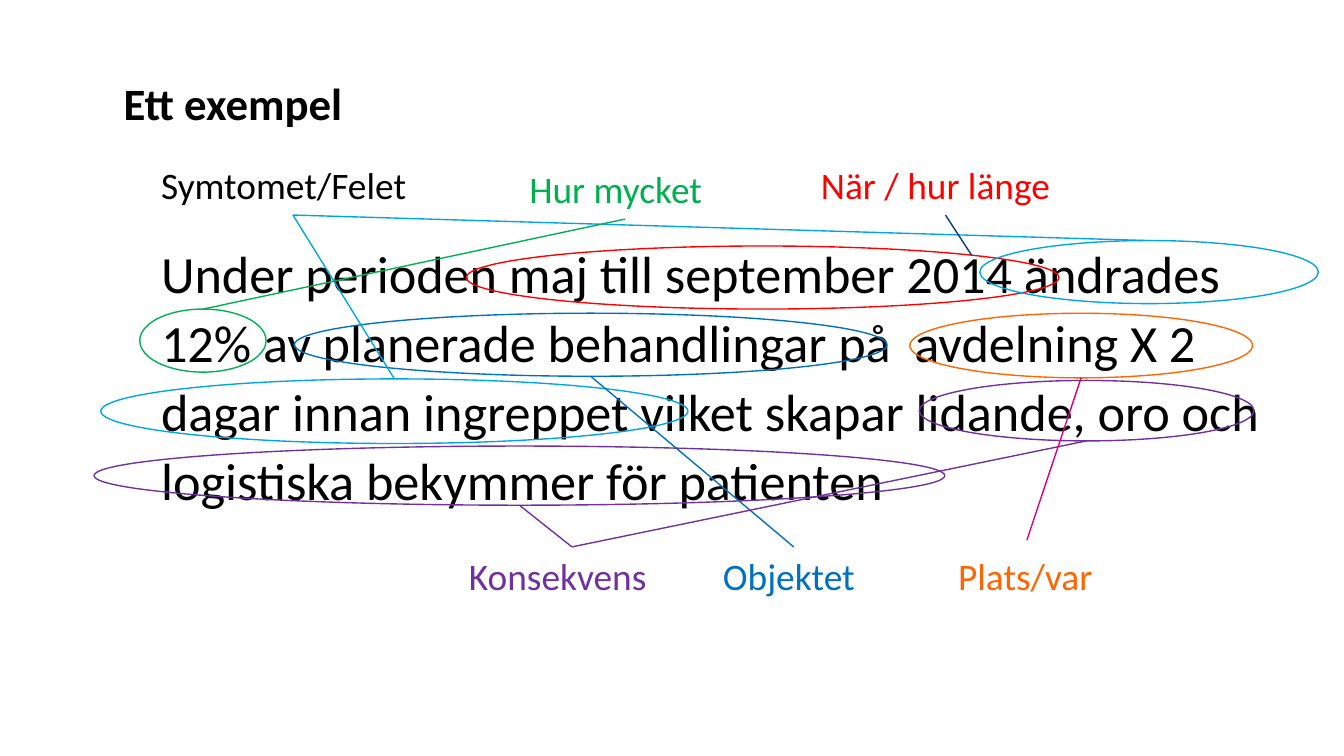
from dataclasses import dataclass

from lxml import etree
from pptx import Presentation
from pptx.dml.color import RGBColor
from pptx.enum import shapes, text
from pptx.oxml import ns
from pptx.util import Pt


@dataclass(frozen=True)
class Theme:
    font: str = "Calibri"
    title_size: int = 24
    body_size: int = 28
    label_size: int = 20
    line_width: float = 0.75
    black: str = "000000"
    red: str = "FF0000"
    cyan: str = "00A6E2"
    green: str = "00B050"
    blue: str = "0070C0"
    orange: str = "FF6500"
    purple: str = "7030A0"
    navy: str = "003D7C"
    magenta: str = "D7007F"


THEME = Theme()
TOP, BOTTOM = 0, 2

STATEMENT = (
    "Under perioden maj till september 2014 ändrades 12% av planerade "
    "behandlingar på  avdelning X 2 dagar innan ingreppet vilket skapar "
    "lidande, oro och logistiska bekymmer för patienten"
)

# Label: text, colour, left, top, width (height is shared)
LABEL_HEIGHT = 31.7
LABELS = {
    "when": ("När / hur länge", THEME.red, 432.7, 83.5, 147.6),
    "symptom": ("Symtomet/Felet", THEME.black, 79.2, 83.5, 155.5),
    "amount": ("Hur mycket", THEME.green, 276.5, 85.7, 116.6),
    "object": ("Objektet", THEME.blue, 380.2, 293, 90),
    "place": ("Plats/var", THEME.orange, 506.2, 293, 87.1),
    "consequence": ("Konsekvens", THEME.purple, 244.1, 293, 124.6),
}

# Ring around a phrase: colour, left, top, width, height
RINGS = {
    "period": (THEME.red, 249.8, 131.8, 317.5, 33.8),
    "changed": (THEME.cyan, 524.9, 128.9, 181.4, 33.8),
    "percent": (THEME.green, 74.9, 165.6, 67.7, 33.8),
    "treatments": (THEME.blue, 157.7, 167.8, 317.5, 33.8),
    "ward": (THEME.orange, 487.4, 167.8, 183.6, 34.6),
    "days before": (THEME.cyan, 54, 203, 314.6, 34.6),
    "suffering": (THEME.purple, 492.5, 203.8, 179.3, 32.4),
    "logistics": (THEME.purple, 50.4, 239, 455.8, 31.7),
}

# Line: label, label side, ring, ring side, colour
LINKS = [
    ("symptom", BOTTOM, "changed", TOP, THEME.cyan),
    ("symptom", BOTTOM, "days before", TOP, THEME.cyan),
    ("amount", BOTTOM, "percent", TOP, THEME.green),
    ("object", TOP, "treatments", BOTTOM, THEME.blue),
    ("consequence", TOP, "logistics", BOTTOM, THEME.purple),
    ("consequence", TOP, "suffering", BOTTOM, THEME.purple),
]


def write_text(frame, words, *, size, color=THEME.black, bold=False,
               spacing=1.0, wrap=True):
    frame.word_wrap = wrap
    frame.vertical_anchor = text.MSO_ANCHOR.TOP
    paragraph = frame.paragraphs[0]
    paragraph.alignment = text.PP_ALIGN.LEFT
    paragraph.line_spacing = spacing
    paragraph.space_before = Pt(0)
    run = paragraph.add_run()
    run.text = words
    run.font.name = THEME.font
    run.font.size = Pt(size)
    run.font.bold = bold
    run.font.color.rgb = RGBColor.from_string(color)


def set_line(shape, color):
    shape.line.color.rgb = RGBColor.from_string(color)
    shape.line.width = Pt(THEME.line_width)


def add_title(slide, words):
    title = slide.shapes.title
    title.left, title.top = Pt(59), Pt(40.3)
    title.width, title.height = Pt(582.5), Pt(40.3)
    write_text(title.text_frame, words, size=THEME.title_size, bold=True, spacing=0.9)
    title.text_frame.auto_size = text.MSO_AUTO_SIZE.NONE


def add_label(slide, words, color, left, top, width):
    label = slide.shapes.add_textbox(Pt(left), Pt(top), Pt(width), Pt(LABEL_HEIGHT))
    write_text(label.text_frame, words, size=THEME.label_size, color=color, wrap=False)
    label.text_frame.auto_size = text.MSO_AUTO_SIZE.SHAPE_TO_FIT_TEXT
    return label


def add_ring(slide, color, *box):
    ring = slide.shapes.add_shape(shapes.MSO_SHAPE.OVAL, *map(Pt, box))
    ring.shadow.inherit = False
    ring.fill.background()
    set_line(ring, color)
    return ring


def side_middle(shape, side):
    drop = shape.height if side == BOTTOM else 0
    return shape.left + shape.width // 2, shape.top + drop


def add_line(slide, start, end, color):
    line = slide.shapes.add_connector(shapes.MSO_CONNECTOR.STRAIGHT, *start, *end)
    set_line(line, color)
    etree.SubElement(line.element.spPr, ns.qn("a:effectLst"))
    return line


def main():
    presentation = Presentation()
    presentation.slide_width, presentation.slide_height = Pt(720), Pt(405)
    slide = presentation.slides.add_slide(presentation.slide_layouts[5])

    # Title and example statement
    add_title(slide, "Ett exempel")
    body = slide.shapes.add_textbox(Pt(79.2), Pt(122.4), Pt(634.3), Pt(263.5))
    write_text(body.text_frame, STATEMENT, size=THEME.body_size, spacing=1.1)

    # Rings around the phrases, and their labels
    rings = {name: add_ring(slide, *ring) for name, ring in RINGS.items()}
    labels = {name: add_label(slide, *label) for name, label in LABELS.items()}

    # Lines from labels to rings
    for label_name, label_side, ring_name, ring_side, color in LINKS:
        label, ring = labels[label_name], rings[ring_name]
        line = add_line(slide, side_middle(label, label_side),
                        side_middle(ring, ring_side), color)
        line.begin_connect(label, label_side)

    # Lines with one end away from a side's middle
    when_line = add_line(slide, side_middle(labels["when"], BOTTOM),
                         (Pt(520.6), Pt(136.8)), THEME.navy)
    when_line.begin_connect(labels["when"], BOTTOM)
    add_line(slide, side_middle(rings["ward"], BOTTOM),
             (Pt(550.1), Pt(289.4)), THEME.magenta)

    presentation.save("out.pptx")


if __name__ == "__main__":
    main()
